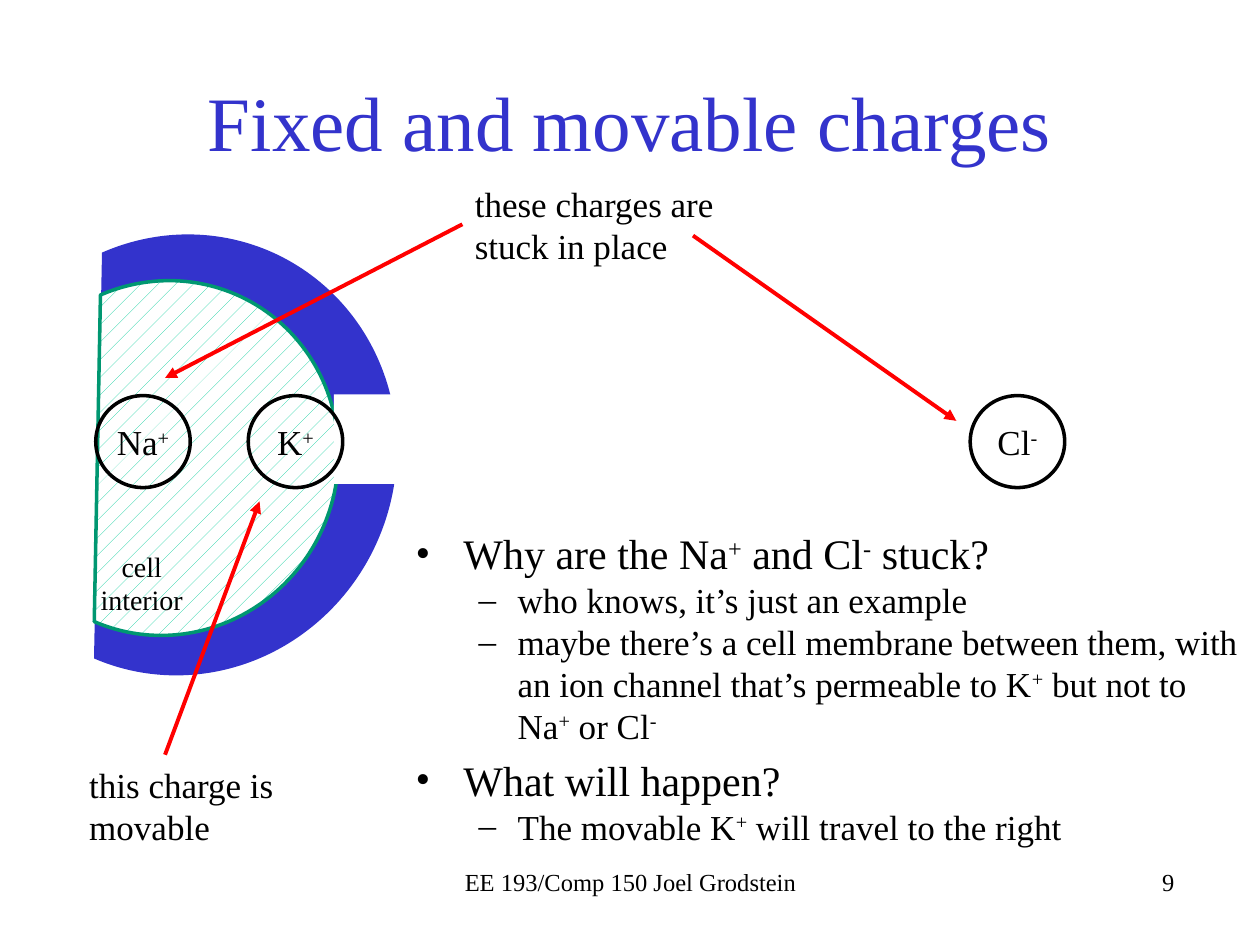
from pptx import Presentation
from pptx.dml.color import RGBColor
from pptx.enum.dml import MSO_PATTERN as Pattern
from pptx.enum.shapes import MSO_CONNECTOR as Connector, MSO_SHAPE as Shape
from pptx.enum.text import MSO_ANCHOR as Anchor, PP_ALIGN as Align
from pptx.oxml.ns import qn
from pptx.util import Inches, Pt
from lxml.etree import SubElement

BLACK = RGBColor(0x00, 0x00, 0x00)
WHITE = RGBColor(0xFF, 0xFF, 0xFF)
BLUE = RGBColor(0x33, 0x33, 0xCC)
MINT = RGBColor(0x00, 0xCC, 0x99)
GREEN = RGBColor(0x00, 0x97, 0x71)
RED = RGBColor(0xFF, 0x00, 0x00)

FONT = "Times New Roman"
CELL_ROTATION = 203.4
ION_TOP = 3.14

BULLETS = [
    (0, "Why are the Na^+^ and Cl^-^ stuck?"),
    (1, "who knows, it’s just an example"),
    (1, "maybe there’s a cell membrane between them, with an ion channel "
        "that’s permeable to K^+^ but not to Na^+^ or Cl^-"),
    (0, "What will happen?"),
    (1, "The movable K^+^ will travel to the right"),
]
BULLET_STYLES = [
    {"mark": "•", "size": 24, "margin": 0.38, "hanging": 0.38, "before": 4.8},
    {"mark": "–", "size": 20, "margin": 0.81, "hanging": 0.31, "before": 0},
]


def write(para, text, size=20, color=BLACK, align=Align.LEFT):
    """Write text in which pieces between carets are superscripts."""
    para.alignment = align
    for index, piece in enumerate(text.split("^")):
        if not piece:
            continue
        span = para.add_run()
        span.text = piece
        span.font.name = FONT
        span.font.size = Pt(size)
        span.font.color.rgb = color
        if index % 2:
            span._r.get_or_add_rPr().set("baseline", "30000")


def add_text_box(page, bounds, anchor=Anchor.TOP):
    box = page.shapes.add_textbox(*map(Inches, bounds))
    box.text_frame.word_wrap = True
    box.text_frame.vertical_anchor = anchor
    return box.text_frame


def add_label(page, bounds, text, anchor=Anchor.TOP, **style):
    write(add_text_box(page, bounds, anchor).paragraphs[0], text, **style)


def add_shape(page, kind, bounds, fill=None, line=None, rotation=0):
    shape = page.shapes.add_shape(kind, *map(Inches, bounds))
    shape.shadow.inherit = False
    shape.rotation = rotation
    if fill is None:
        shape.fill.background()
    else:
        shape.fill.solid()
        shape.fill.fore_color.rgb = fill
    if line is None:
        shape.line.fill.background()
    else:
        shape.line.color.rgb = line
        shape.line.width = Pt(2)
    return shape


def add_cell(page):
    add_shape(page, Shape.CHORD, (-0.25, 1.85, 3.39, 3.52), fill=BLUE,
              rotation=CELL_ROTATION)
    interior = add_shape(page, Shape.CHORD, (-0.06, 2.22, 2.74, 2.83),
                         line=GREEN, rotation=CELL_ROTATION)
    interior.fill.patterned()
    interior.fill.pattern = Pattern.PERCENT_5
    interior.fill.fore_color.rgb = MINT
    interior.fill.back_color.rgb = WHITE
    add_shape(page, Shape.RECTANGLE, (2.65, 3.13, 0.64, 0.71), fill=WHITE)


def add_ion(page, left, text):
    ion = add_shape(page, Shape.OVAL, (left, ION_TOP, 0.75, 0.73), line=BLACK)
    frame = ion.text_frame
    frame.margin_left = frame.margin_right = 0
    frame.margin_top = frame.margin_bottom = 0
    frame.vertical_anchor = Anchor.MIDDLE
    write(frame.paragraphs[0], text, align=Align.CENTER)


def add_arrow(page, start, end):
    arrow = page.shapes.add_connector(Connector.STRAIGHT,
                                      *map(Inches, start + end))
    arrow.line.color.rgb = RED
    arrow.line.width = Pt(2.25)
    SubElement(arrow.line._get_or_add_ln(), qn("a:tailEnd"), type="triangle")
    SubElement(arrow._element.spPr, qn("a:effectLst"))


def add_bullets(page, bounds):
    frame = add_text_box(page, bounds)
    for index, (level, text) in enumerate(BULLETS):
        para = frame.add_paragraph() if index else frame.paragraphs[0]
        style = BULLET_STYLES[level]
        para.level = level
        para.space_before = Pt(style["before"])
        write(para, text, size=style["size"])
        properties = para._p.get_or_add_pPr()
        properties.set("marL", str(Inches(style["margin"])))
        properties.set("indent", str(-Inches(style["hanging"])))
        SubElement(properties, qn("a:buFont"), typeface=FONT)
        SubElement(properties, qn("a:buChar"), char=style["mark"])


def main():
    deck = Presentation()
    deck.slide_width, deck.slide_height = Inches(10), Inches(7.5)
    page = deck.slides.add_slide(deck.slide_layouts[6])

    add_cell(page)
    add_label(page, (0.75, 0.33, 8.5, 1.25), "Fixed and movable charges",
              anchor=Anchor.MIDDLE, size=44, color=BLUE, align=Align.CENTER)
    add_bullets(page, (3.2, 4.14, 6.79, 2.26))

    for left, text in [(0.76, "Na^+"), (1.97, "K^+"), (7.7, "Cl^-")]:
        add_ion(page, left, text)

    add_label(page, (3.67, 1.4, 2.61, 0.77), "these charges are stuck in place")
    add_label(page, (0.61, 6.01, 1.83, 0.77), "this charge is movable")
    add_arrow(page, (1.31, 5.99), (2.06, 3.98))
    add_arrow(page, (5.5, 1.87), (7.59, 3.34))
    add_arrow(page, (3.67, 1.78), (1.31, 3))
    add_label(page, (0.6, 4.31, 1.05, 0.64), "cell interior", size=16,
              align=Align.CENTER)

    add_label(page, (3.42, 6.83, 3.17, 0.34), "EE 193/Comp 150 Joel Grodstein",
              size=14, align=Align.CENTER)
    add_label(page, (6.25, 6.83, 3.17, 0.5), "9", size=14, align=Align.RIGHT)
    deck.save("out.pptx")


if __name__ == "__main__":
    main()
